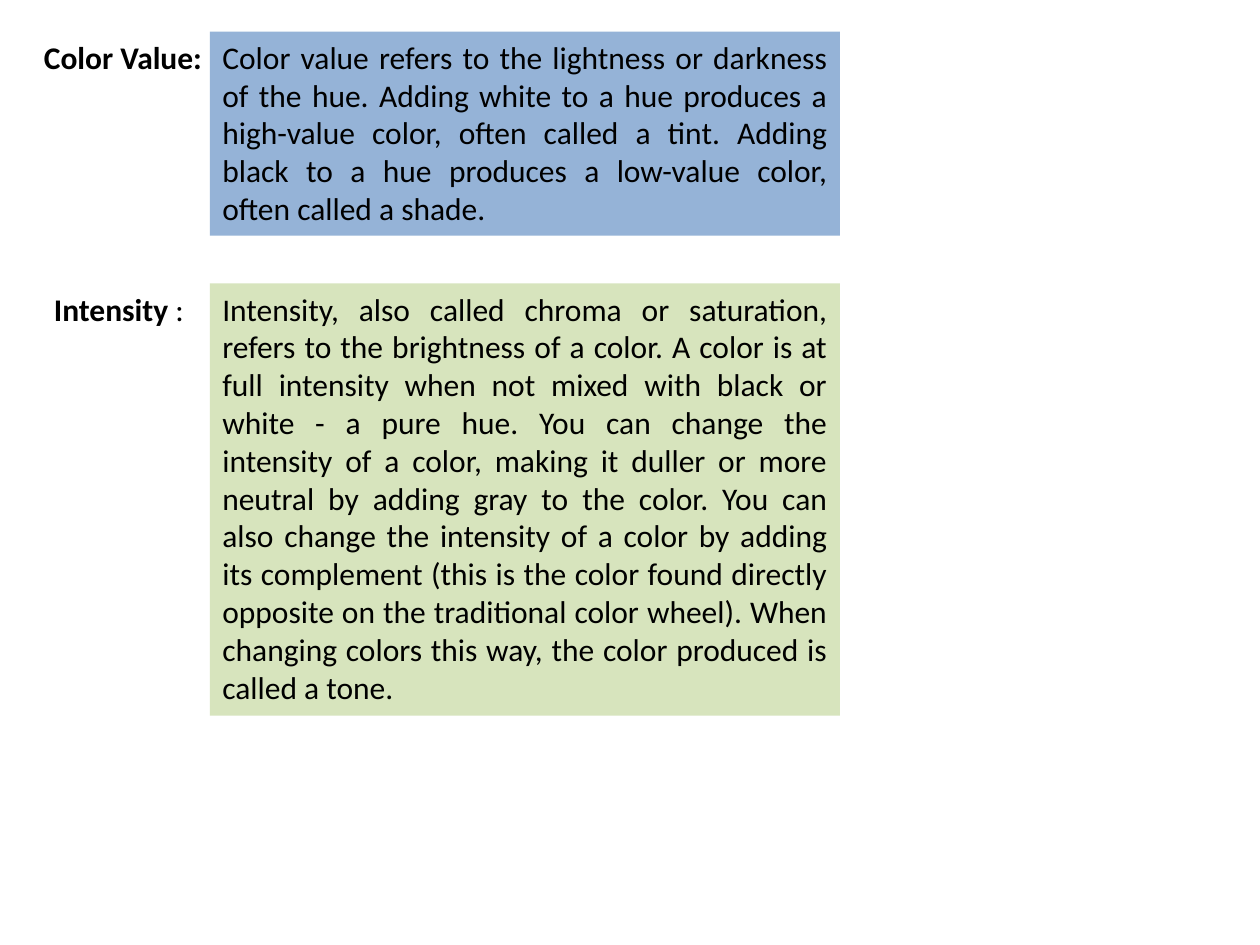
import pptx
import pptx.util
import pptx.dml.color
import pptx.enum.shapes
import pptx.enum.text
from dataclasses import dataclass

SLIDE_WIDTH, SLIDE_HEIGHT = 10, 7.5
DEFINITION_LEFT = SLIDE_WIDTH / 6
DEFINITION_WIDTH = SLIDE_WIDTH / 2
TERM_HEIGHT = 0.4


@dataclass(frozen=True)
class Theme:
    font: str = "Calibri"
    size: int = 18
    text: str = "000000"
    value_fill: str = "95B3D7"
    intensity_fill: str = "D7E4BD"


THEME = Theme()

COLOR_VALUE = (
    "Color value refers to the lightness or darkness of the hue. "
    "Adding white to a hue produces a high-value color, often called a tint. "
    "Adding black to a hue produces a low-value color, often called a shade. "
)
INTENSITY = (
    "Intensity, also called chroma or saturation, refers to the brightness of a color. "
    "A color is at full intensity when not mixed with black or white - a pure hue. "
    "You can change the intensity of a color, making it duller or more neutral "
    "by adding gray to the color. You can also change the intensity of a color "
    "by adding its complement (this is the color found directly opposite on the "
    "traditional color wheel). When changing colors this way, the color produced "
    "is called a tone."
)


def rgb(value):
    return pptx.dml.color.RGBColor.from_string(value)


def box(left, top, width, height):
    return [pptx.util.Inches(length) for length in (left, top, width, height)]


def add_text(paragraph, text, *, bold=False, size=THEME.size, color=THEME.text):
    run = paragraph.add_run()
    run.text = text
    run.font.name = THEME.font
    run.font.size = pptx.util.Pt(size)
    run.font.bold = bold
    run.font.color.rgb = rgb(color)


def add_term(slide, left, top, width, parts):
    """Unwrapped label made of (text, bold) parts."""
    frame = slide.shapes.add_textbox(*box(left, top, width, TERM_HEIGHT)).text_frame
    frame.word_wrap = False
    frame.auto_size = pptx.enum.text.MSO_AUTO_SIZE.SHAPE_TO_FIT_TEXT
    for text, bold in parts:
        add_text(frame.paragraphs[0], text, bold=bold)


def add_definition(slide, top, height, text, fill):
    """Justified explanation on a coloured panel."""
    panel = slide.shapes.add_shape(
        pptx.enum.shapes.MSO_SHAPE.RECTANGLE,
        *box(DEFINITION_LEFT, top, DEFINITION_WIDTH, height),
    )
    panel.shadow.inherit = False
    panel.fill.solid()
    panel.fill.fore_color.rgb = rgb(fill)
    panel.line.fill.background()
    frame = panel.text_frame
    frame.word_wrap = True
    frame.auto_size = pptx.enum.text.MSO_AUTO_SIZE.SHAPE_TO_FIT_TEXT
    frame.vertical_anchor = pptx.enum.text.MSO_ANCHOR.TOP
    paragraph = frame.paragraphs[0]
    paragraph.alignment = pptx.enum.text.PP_ALIGN.JUSTIFY
    add_text(paragraph, text)


def main():
    deck = pptx.Presentation()
    deck.slide_width = pptx.util.Inches(SLIDE_WIDTH)
    deck.slide_height = pptx.util.Inches(SLIDE_HEIGHT)
    slide = deck.slides.add_slide(deck.slide_layouts.get_by_name("Blank"))

    # Color value
    value_top = SLIDE_HEIGHT / 30
    add_term(slide, 0.25, value_top, 1.52, [("Color Value: ", True)])
    add_definition(slide, value_top, 1.62, COLOR_VALUE, THEME.value_fill)

    # Intensity
    intensity_top = SLIDE_HEIGHT * 0.3
    add_term(slide, 0.33, intensity_top, 1.24, [("Intensity", True), (" :", False)])
    add_definition(slide, intensity_top, 3.43, INTENSITY, THEME.intensity_fill)

    deck.save("out.pptx")


if __name__ == "__main__":
    main()
